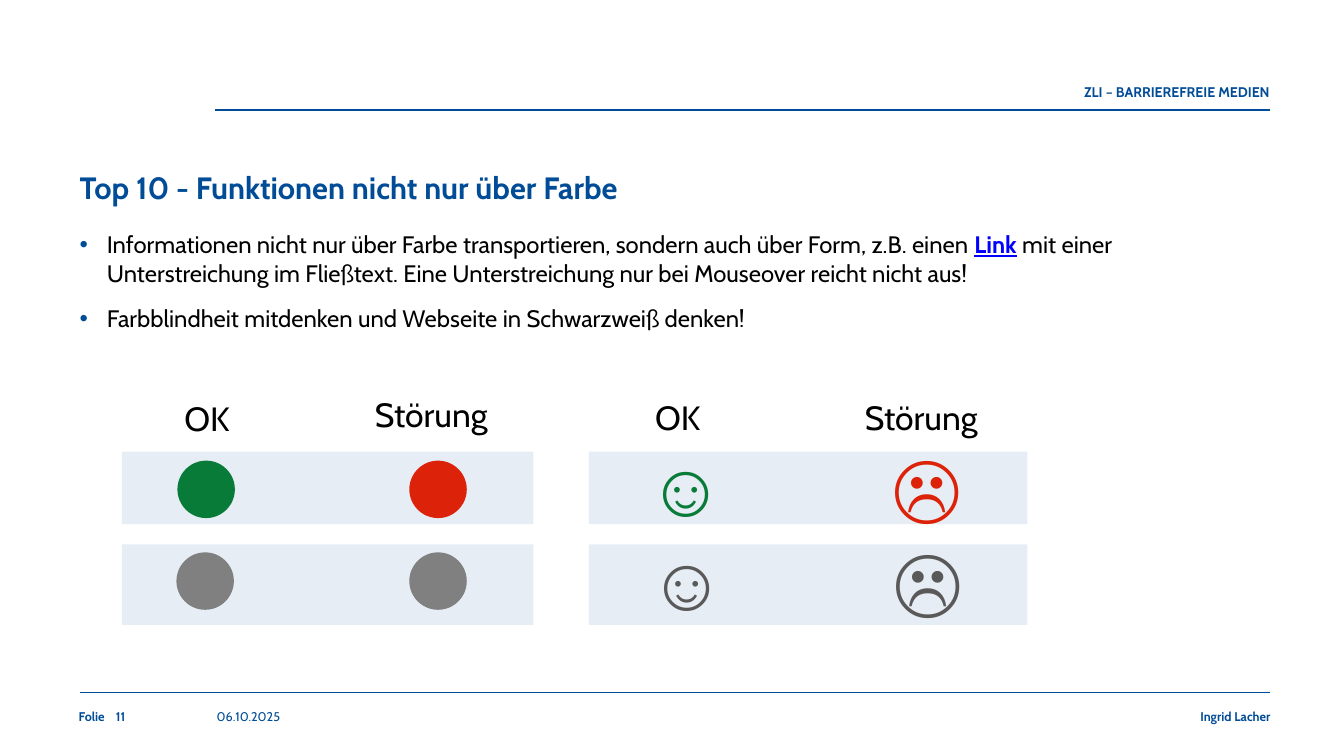
from lxml import etree
from pptx import Presentation
from pptx.dml.color import RGBColor
from pptx.enum.shapes import MSO_CONNECTOR, MSO_SHAPE
from pptx.enum.text import PP_ALIGN
from pptx.oxml import parse_xml
from pptx.oxml.ns import nsdecls, qn
from pptx.util import Inches, Pt

LINE = MSO_CONNECTOR.STRAIGHT
RECT = MSO_SHAPE.RECTANGLE
DOT = MSO_SHAPE.FLOWCHART_CONNECTOR
LEFT, RIGHT = PP_ALIGN.LEFT, PP_ALIGN.RIGHT

BLUE = RGBColor(0x00, 0x4C, 0x97)
PALE = RGBColor(0xCC, 0xDB, 0xEA)
GREEN = RGBColor(0x08, 0x7B, 0x38)
RED = RGBColor(0xDC, 0x23, 0x09)
GRAY = RGBColor(0x80, 0x80, 0x80)
DARK = RGBColor(0x59, 0x59, 0x59)
BLACK = RGBColor(0x00, 0x00, 0x00)
LINK = RGBColor(0x00, 0x00, 0xFF)

prs = Presentation()
prs.slide_width, prs.slide_height = Inches(13.33), Inches(7.5)
slide = prs.slides.add_slide(prs.slide_layouts[6])
shapes = slide.shapes


def add_text(text, x, y, w, h, size, color, bold=False, align=LEFT, inset=0, font="Cabin"):
    box = shapes.add_textbox(Inches(x), Inches(y), Inches(w), Inches(h))
    frame = box.text_frame
    frame.word_wrap = True
    frame.margin_left = frame.margin_right = Inches(inset)
    frame.margin_top = frame.margin_bottom = Inches(inset / 2)
    para = frame.paragraphs[0]
    para.text = text
    para.alignment = align
    para.font.name, para.font.size = font, Pt(size)
    para.font.bold, para.font.color.rgb = bold, color


def add_form(kind, x, y, w, h, color):
    form = shapes.add_shape(kind, Inches(x), Inches(y), Inches(w), Inches(h))
    form.shadow.inherit = False
    form.fill.solid()
    form.fill.fore_color.rgb = color
    form.line.fill.background()
    return form


for x, y in [(2.13, 1.09), (0.79, 6.87)]:
    rule = shapes.add_connector(LINE, Inches(x), Inches(y), Inches(12.6), Inches(y))
    rule.line.color.rgb = BLUE
    rule.line.width = Pt(1)
    etree.SubElement(rule._element.spPr, qn("a:effectLst"))

add_text("ZLI – BARRIEREFREIE MEDIEN", 7.6, 0.83, 4.99, 0.24, 10, BLUE, True, RIGHT)
add_text("Top 10 - Funktionen nicht nur über Farbe", 0.79, 1.67, 11.81, 0.43, 22, BLUE, True)
for text, x, w, bold, align in [
    ("Folie", 0.78, 0.47, True, LEFT),
    ("11", 1.15, 0.61, True, LEFT),
    ("06.10.2025", 2.15, 1.36, False, LEFT),
    ("Ingrid Lacher", 3.97, 8.63, True, RIGHT),
]:
    add_text(text, x, 7.03, w, 0.26, 9, BLUE, bold, align)

body = shapes.add_textbox(Inches(0.79), Inches(2.28), Inches(11.81), Inches(4.3)).text_frame
body.word_wrap = True
body.margin_left = body.margin_right = body.margin_top = body.margin_bottom = 0
points = [
    [
        "Informationen nicht nur über Farbe transportieren, sondern auch über Form, z.B. einen ",
        "Link",
        " mit einer Unterstreichung im Fließtext. Eine Unterstreichung nur bei Mouseover reicht nicht aus!",
    ],
    ["Farbblindheit mitdenken und Webseite in Schwarzweiß denken!"],
]
for i, parts in enumerate(points):
    para = body.add_paragraph() if i else body.paragraphs[0]
    para.space_after = Pt(12)
    props = para._p.get_or_add_pPr()
    props.set("marL", str(Inches(0.27)))
    props.set("indent", str(-Inches(0.27)))
    for xml in [
        f'<a:buClr {nsdecls("a")}><a:srgbClr val="{BLUE}"/></a:buClr>',
        f'<a:buFont {nsdecls("a")} typeface="Arial"/>',
        f'<a:buChar {nsdecls("a")} char="•"/>',
    ]:
        props.append(parse_xml(xml))
    para.font.name, para.font.size = "Cabin", Pt(17)
    para.font.color.rgb = BLACK
    for part in parts:
        run = para.add_run()
        run.text = part
        if part == "Link":
            run.font.bold = run.font.underline = True
            run.font.color.rgb = LINK

for x, w in [(1.21, 4.08), (5.84, 4.35)]:
    for y, h in [(4.48, 0.72), (5.4, 0.8)]:
        band = add_form(RECT, x, y, w, h, PALE)
        tint = band._element.spPr.find(qn("a:solidFill"))[0]
        etree.SubElement(tint, qn("a:alpha")).set("val", "49000")

for text, x, y, w in [
    ("OK", 1.73, 3.9, 0.77),
    ("Störung", 3.62, 3.86, 1.91),
    ("OK", 6.4, 3.89, 0.77),
    ("Störung", 8.48, 3.89, 1.91),
]:
    add_text(text, x, y, w, 0.5, 24, BLACK, inset=0.1)

for x, y, color in [(1.76, 4.57, GREEN), (4.06, 4.57, RED), (1.75, 5.48, GRAY), (4.06, 5.48, GRAY)]:
    add_form(DOT, x, y, 0.57, 0.57, color)

for face, x, y, color in [
    ("☺", 6.32, 4.32, GREEN),
    ("☹", 8.75, 4.3, RED),
    ("☺", 6.33, 5.26, DARK),
    ("☹", 8.76, 5.24, DARK),
]:
    add_text(face, x, y, 0.88, 1.01, 54, color, inset=0.1, font="Arial")

prs.save("out.pptx")
